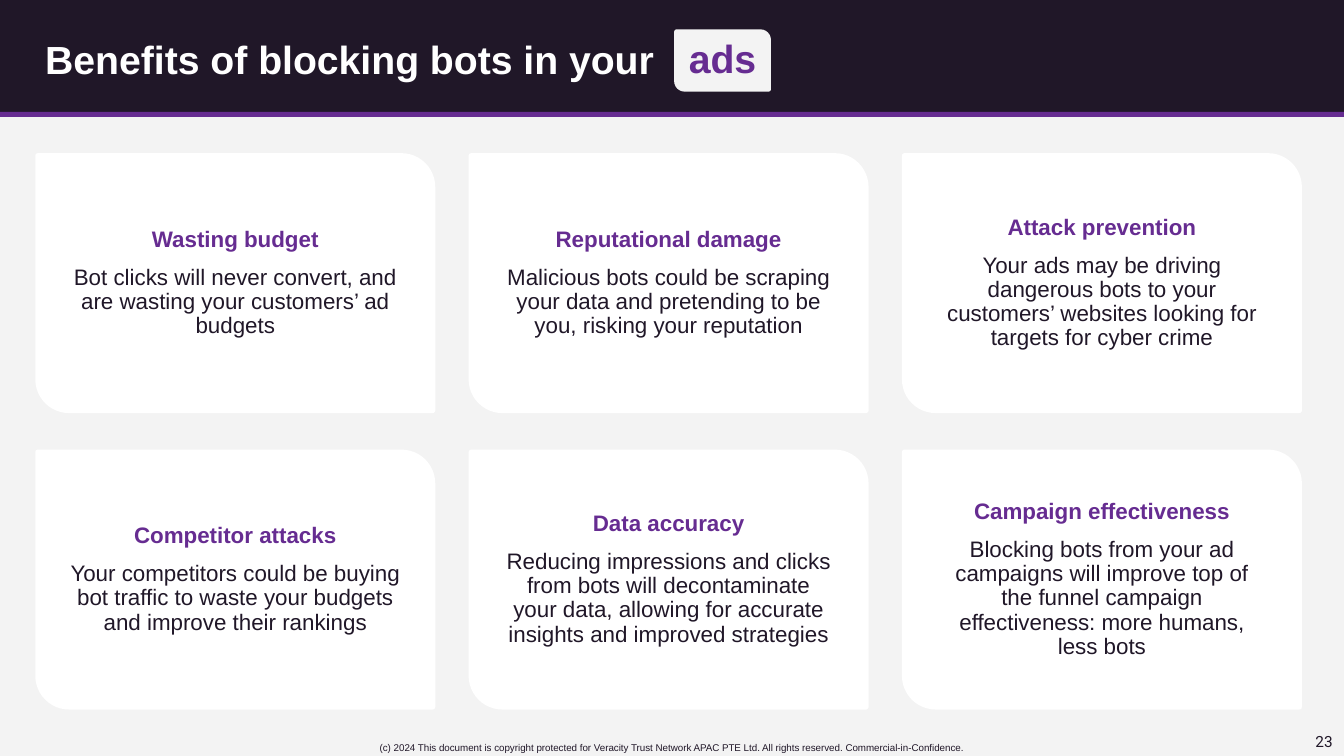
"""Build the slide on the benefits of blocking bots in ads."""
from pptx import Presentation
from pptx.dml.color import RGBColor
from pptx.enum.shapes import MSO_SHAPE as SHAPE
from pptx.enum.text import MSO_ANCHOR as ANCHOR, PP_ALIGN as ALIGN
from pptx.util import Cm, Pt

COLORS = {"dark": "201728", "purple": "662C91", "light": "F3F3F3", "white": "FFFFFF"}

BENEFITS = [
    ("Wasting budget",
     "Bot clicks will never convert, and are wasting your customers’ ad budgets"),
    ("Reputational damage",
     "Malicious bots could be scraping your data and pretending to be you, "
     "risking your reputation"),
    ("Attack prevention",
     "Your ads may be driving dangerous bots to your customers’ websites "
     "looking for targets for cyber crime"),
    ("Competitor attacks",
     "Your competitors could be buying bot traffic to waste your budgets "
     "and improve their rankings"),
    ("Data accuracy",
     "Reducing impressions and clicks from bots will decontaminate your data, "
     "allowing for accurate insights and improved strategies"),
    ("Campaign effectiveness",
     "Blocking bots from your ad campaigns will improve top of the funnel "
     "campaign effectiveness: more humans, less bots"),
]
COLUMNS = 3
CARD_W, CARD_H = 10.08, 6.55
CARD_LEFT, CARD_TOP = 0.89, 3.86
PITCH_X, PITCH_Y = 10.92, 7.47
PADDING = 0.63


def rgb(name):
    return RGBColor.from_string(COLORS[name])


def add_block(s, kind, x, y, w, h, color, corners=()):
    sp = s.shapes.add_shape(kind, Cm(x), Cm(y), Cm(w), Cm(h))
    sp.shadow.inherit = False
    sp.fill.solid()
    sp.fill.fore_color.rgb = rgb(color)
    sp.line.fill.background()
    for i, corner in enumerate(corners):
        sp.adjustments[i] = corner
    return sp


def format_paragraph(p, size, color, bold=False, align=ALIGN.CENTER, font="Arial"):
    p.alignment = align
    p.line_spacing = 0.9
    for r in p.runs:
        r.font.name = font
        r.font.size = Pt(size)
        r.font.bold = bold
        r.font.color.rgb = rgb(color)


def add_text(s, text, x, y, w, h):
    tf = s.shapes.add_textbox(Cm(x), Cm(y), Cm(w), Cm(h)).text_frame
    tf.word_wrap = True
    tf.vertical_anchor = ANCHOR.MIDDLE
    tf.text = text
    return tf


def add_header(s):
    add_block(s, SHAPE.RECTANGLE, 0, 0, 33.87, 2.84, "dark")
    add_block(s, SHAPE.RECTANGLE, 0, 2.82, 33.87, 0.13, "purple")
    tf = add_text(s, "Benefits of blocking bots in your", 0.89, 0.74, 16, 1.65)
    format_paragraph(tf.paragraphs[0], 28, "white", True, ALIGN.LEFT)
    badge = add_block(s, SHAPE.ROUND_2_DIAG_RECTANGLE, 16.99, 0.74, 2.44, 1.57,
                      "light", (0.04, 0.17))
    tf = badge.text_frame
    tf.margin_left = tf.margin_right = 0
    tf.vertical_anchor = ANCHOR.MIDDLE
    tf.text = "ads"
    format_paragraph(tf.paragraphs[0], 28, "purple", True)


def add_card(s, x, y, heading, body):
    add_block(s, SHAPE.ROUND_2_DIAG_RECTANGLE, x, y, CARD_W, CARD_H,
              "white", (0.01, 0.13))
    tf = add_text(s, heading, x + PADDING, y + PADDING,
                  CARD_W - 2 * PADDING, CARD_H - 2 * PADDING)
    format_paragraph(tf.paragraphs[0], 16, "purple", True)
    p = tf.add_paragraph()
    p.text = body
    p.space_before = Pt(10)
    format_paragraph(p, 16, "dark")


def add_footer(s):
    tf = add_text(s, "(c) 2024 This document is copyright protected for Veracity Trust "
                  "Network APAC PTE Ltd. All rights reserved. Commercial-in-Confidence.",
                  6.88, 18.58, 20.09, 0.56)
    format_paragraph(tf.paragraphs[0], 7, "dark")
    tf = add_text(s, "23", 32.87, 18.34, 1, 0.74)
    tf.margin_left = tf.margin_right = 0
    format_paragraph(tf.paragraphs[0], 11, "dark", font="Roboto")


def main():
    prs = Presentation()
    prs.slide_width, prs.slide_height = Cm(33.87), Cm(19.05)
    s = prs.slides.add_slide(prs.slide_layouts[6])
    s.background.fill.solid()
    s.background.fill.fore_color.rgb = rgb("light")
    add_header(s)
    for i, (heading, body) in enumerate(BENEFITS):
        row, col = divmod(i, COLUMNS)
        add_card(s, CARD_LEFT + col * PITCH_X, CARD_TOP + row * PITCH_Y, heading, body)
    add_footer(s)
    prs.save("out.pptx")


if __name__ == "__main__":
    main()
